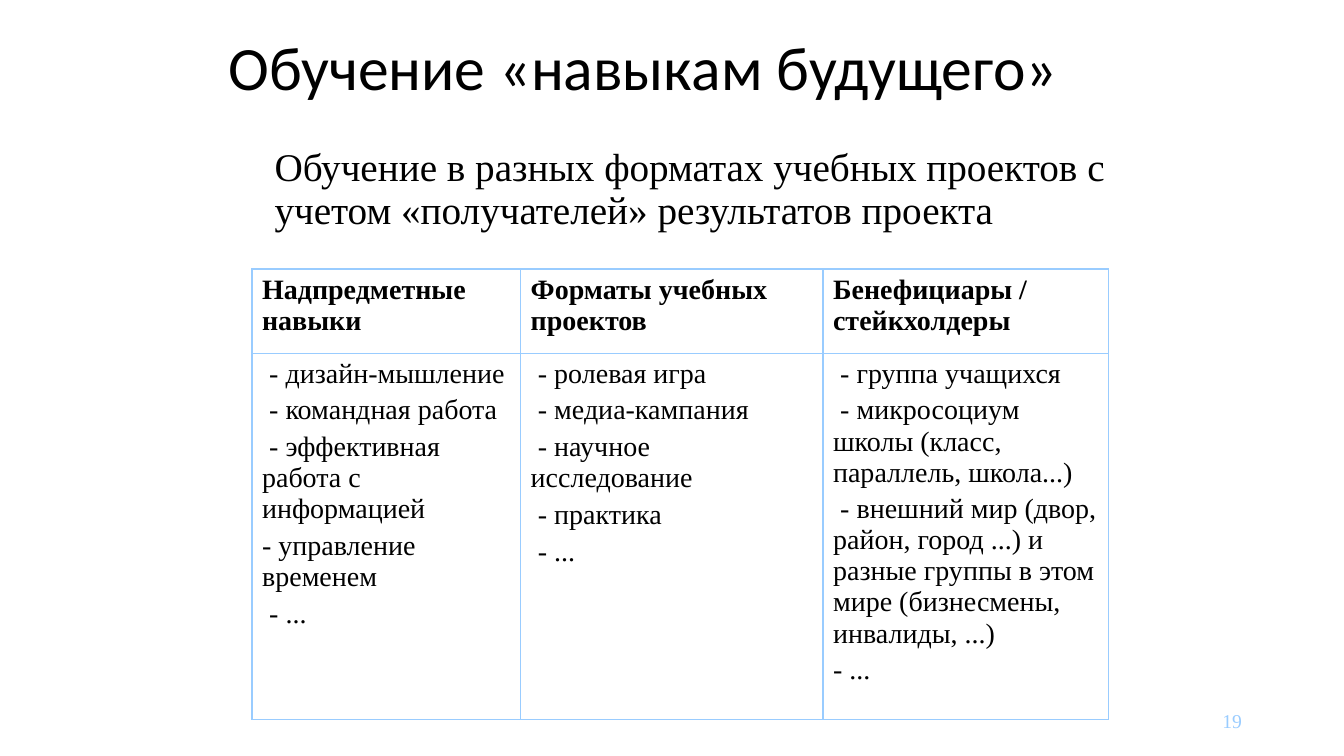
from lxml import etree
from pptx import Presentation
from pptx.dml.color import RGBColor
from pptx.enum import text as t
from pptx.oxml import ns
from pptx.util import Cm, Pt

BLACK = RGBColor(0, 0, 0)
SKY = RGBColor(0x99, 0xCC, 0xFF)
SERIF = "Times New Roman"
HEADS = ["Надпредметные навыки", "Форматы учебных проектов", "Бенефициары / стейкхолдеры"]
LISTS = [
    ["- дизайн-мышление", "- командная работа", "- эффективная работа с информацией",
     "- управление временем", "- ..."],
    ["- ролевая игра", "- медиа-кампания", "- научное исследование", "- практика", "- ..."],
    ["- группа учащихся", "- микросоциум школы (класс, параллель, школа...)",
     "- внешний мир (двор, район, город ...) и разные группы в этом мире "
     "(бизнесмены, инвалиды, ...)", "- ..."],
]
FLUSH = {(0, 3), (2, 3)}
WIDTHS = [Cm(6.77), Cm(7.62), Cm(7.2)]
ROWS = [Cm(2.12), Cm(9.23)]


def style(par, size, color=BLACK, font=SERIF, bold=False):
    for run in par.runs:
        run.font.size = Pt(size)
        run.font.name = font
        run.font.bold = bold
        run.font.color.rgb = color


def indent(par, left, first):
    props = par._p.get_or_add_pPr()
    props.set("marL", str(left))
    props.set("indent", str(first))


def add_title(slide, words):
    title = slide.shapes.title
    title.left, title.top, title.width, title.height = Cm(5.5), Cm(0.2), Cm(22.4), Cm(3.18)
    frame = title.text_frame
    frame.text = words
    frame.vertical_anchor = t.MSO_ANCHOR.MIDDLE
    frame.auto_size = t.MSO_AUTO_SIZE.NONE
    par = frame.paragraphs[0]
    par.alignment = t.PP_ALIGN.LEFT
    par.line_spacing = 0.9
    style(par, 44, font="Calibri")


def add_text(slide, words, box, size, color=BLACK):
    frame = slide.shapes.add_textbox(*box).text_frame
    frame.word_wrap = True
    frame.text = words
    style(frame.paragraphs[0], size, color)
    return frame


def add_edges(cell):
    props = cell._tc.get_or_add_tcPr()
    for index, side in enumerate(("lnL", "lnR", "lnT", "lnB")):
        line = etree.Element(ns.qn("a:" + side), w=str(Pt(1)))
        fill = etree.SubElement(line, ns.qn("a:solidFill"))
        etree.SubElement(fill, ns.qn("a:srgbClr"), val=str(SKY))
        props.insert(index, line)


def fill_cell(cell, lines, bold=False):
    cell.fill.background()
    add_edges(cell)
    cell.text_frame.text = "\n".join(lines)
    for index, par in enumerate(cell.text_frame.paragraphs):
        if index:
            par.space_before = Pt(4)
        style(par, 20, bold=bold)


def add_grid(slide):
    frame = slide.shapes.add_table(2, 3, Cm(6.35), Cm(6.78), sum(WIDTHS), sum(ROWS))
    table = frame.table
    for row, height in zip(table.rows, ROWS):
        row.height = height
    for col, width in enumerate(WIDTHS):
        table.columns[col].width = width
        fill_cell(table.cell(0, col), [HEADS[col]], bold=True)
        cell = table.cell(1, col)
        fill_cell(cell, LISTS[col])
        for index, par in enumerate(cell.text_frame.paragraphs):
            if (col, index) not in FLUSH and (col, index) != (2, 3):
                indent(par, 0, Cm(0.18))


def main():
    deck = Presentation()
    deck.slide_width, deck.slide_height = Cm(33.87), Cm(19.05)
    slide = deck.slides.add_slide(deck.slide_layouts[5])
    add_title(slide, "Обучение «навыкам будущего»")
    lead = add_text(slide, "Обучение в разных форматах учебных проектов с учетом "
                    "«получателей» результатов проекта",
                    (Cm(5.72), Cm(3.6), Cm(22.43), Cm(2.62)), 28)
    indent(lead.paragraphs[0], Cm(0.95), 0)
    lead.paragraphs[0].line_spacing = 0.9
    add_grid(slide)
    page = add_text(slide, "19", (Cm(23.93), Cm(17.65), Cm(7.62), Cm(1.02)), 14, SKY)
    page.vertical_anchor = t.MSO_ANCHOR.MIDDLE
    page.paragraphs[0].alignment = t.PP_ALIGN.RIGHT
    deck.save("out.pptx")


if __name__ == "__main__":
    main()
